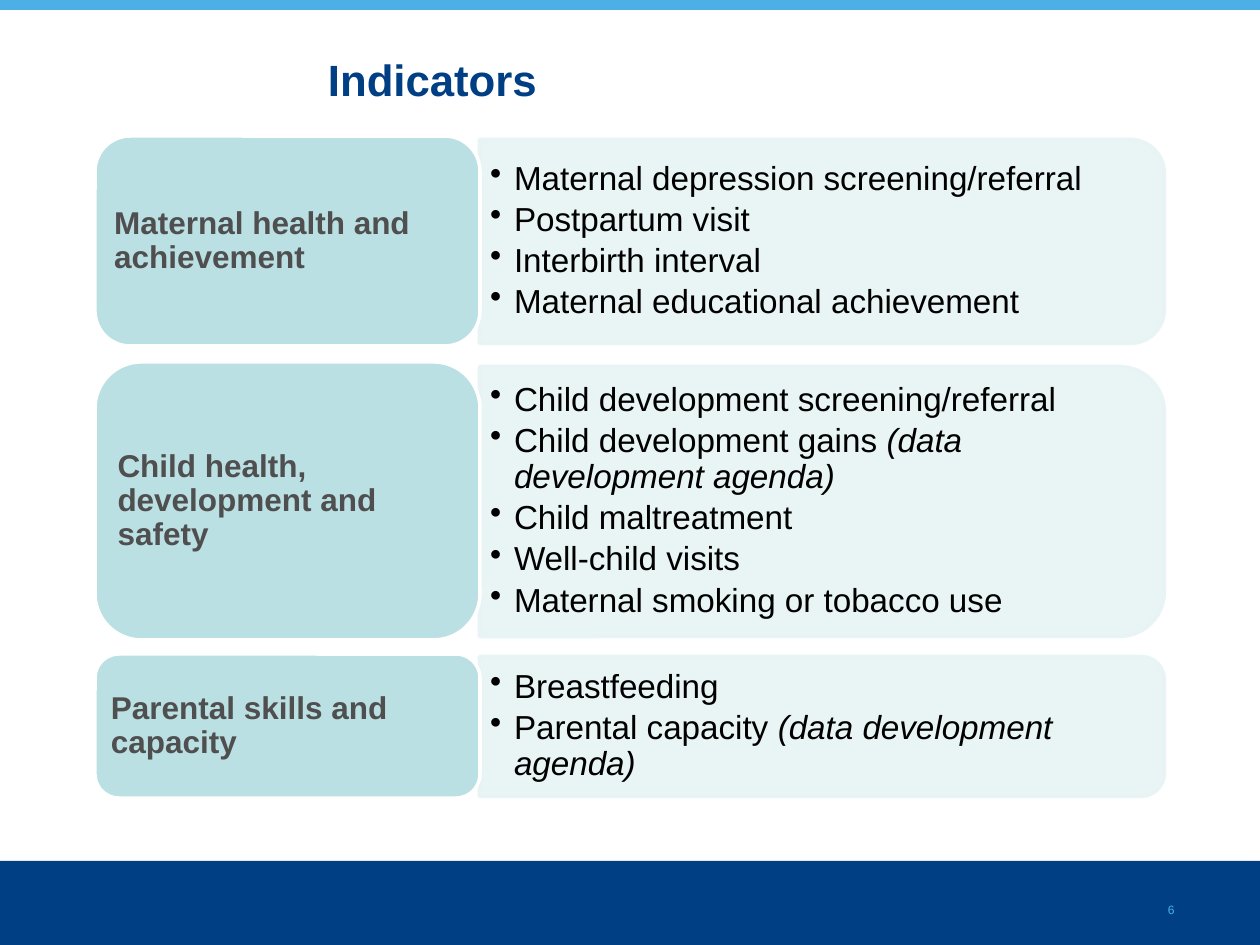
from lxml import etree
from pptx import Presentation
from pptx.dml.color import RGBColor
from pptx.enum.shapes import MSO_SHAPE
from pptx.enum.text import MSO_ANCHOR, MSO_AUTO_SIZE, PP_ALIGN
from pptx.oxml.ns import qn
from pptx.util import Pt

RECT = MSO_SHAPE.RECTANGLE
ROUNDED = MSO_SHAPE.ROUNDED_RECTANGLE
ROUND_TOP = MSO_SHAPE.ROUND_2_SAME_RECTANGLE
MIDDLE = MSO_ANCHOR.MIDDLE
TOP = MSO_ANCHOR.TOP
LEFT = PP_ALIGN.LEFT
NO_FIT = MSO_AUTO_SIZE.NONE
PX = 7257

NAVY = "003F83"
SKY = "4CAFE6"
TEAL = "BBE0E3"
PALE = "E7F3F4"


def paint(fill, color):
    fill.solid()
    fill.fore_color.rgb = RGBColor.from_string(color)


def write(frame, lines, size, color, bold=False, anchor=MIDDLE, inset=(13, 6),
          spacing=1.0, after=0, bullet_indent=0, wrap=True, baseline=0):
    frame.word_wrap = wrap
    frame.auto_size = NO_FIT
    frame.vertical_anchor = anchor
    frame.margin_left = frame.margin_right = inset[0] * PX
    frame.margin_top = frame.margin_bottom = inset[1] * PX
    for index, line in enumerate(lines):
        paragraph = frame.add_paragraph() if index else frame.paragraphs[0]
        paragraph.alignment = LEFT
        paragraph.line_spacing = spacing
        paragraph.space_after = Pt(after)
        if bullet_indent:
            props = paragraph._p.get_or_add_pPr()
            props.set("marL", str(bullet_indent * PX))
            props.set("indent", str(-bullet_indent * PX))
            etree.SubElement(props, qn("a:buChar")).set("char", "•")
        for part, text in enumerate(line):
            run = paragraph.add_run()
            run.text = text
            run.font.name = "Arial"
            run.font.size = Pt(size)
            run.font.bold = bold
            run.font.italic = part == 1
            paint(run.font.fill, color)
            if baseline:
                run._r.get_or_add_rPr().set("baseline", str(baseline))


prs = Presentation()
prs.slide_width = 1260 * PX
prs.slide_height = 945 * PX
slide = prs.slides.add_slide(prs.slide_layouts[5])
shapes = slide.shapes

for top, height, color in [(861, 84, NAVY), (0, 10, SKY)]:
    band = shapes.add_shape(RECT, 0, top * PX, 1260 * PX, height * PX)
    band.shadow.inherit = False
    paint(band.fill, color)
    band.line.fill.background()

page_number = shapes.add_textbox(1155 * PX, 882 * PX, 43 * PX, 29 * PX)
write(page_number.text_frame, [["6"]], 12, "46B0E7", anchor=TOP,
      wrap=False, baseline=-25000)

title = shapes.title
title.left, title.top = 315 * PX, 42 * PX
title.width, title.height = 851 * PX, 73 * PX
write(title.text_frame, [["Indicators"]], 25, NAVY, bold=True)

groups = [
    ("Maternal health and achievement", 136, 210, 204, [
        ["Maternal depression screening/referral"],
        ["Postpartum visit"],
        ["Interbirth interval"],
        ["Maternal educational achievement"],
    ]),
    ("Child health, development and safety", 362, 278, 270, [
        ["Child development screening/referral"],
        ["Child development gains ", "(data development agenda)"],
        ["Child maltreatment"],
        ["Well-child visits"],
        ["Maternal smoking or tobacco use"],
    ]),
    ("Parental skills and capacity", 654, 144, 140, [
        ["Breastfeeding"],
        ["Parental capacity ", "(data development agenda)"],
    ]),
]
label_left, label_width, panel_width = 95, 385, 685
panel_left = label_left + label_width

for name, top, height, panel_height, indicators in groups:
    middle = top + height // 2
    panel = shapes.add_shape(
        ROUND_TOP,
        (panel_left + (panel_width - panel_height) // 2) * PX,
        (middle - panel_width // 2) * PX,
        panel_height * PX, panel_width * PX)
    panel.rotation = 90
    panel.shadow.inherit = False
    paint(panel.fill, PALE)
    paint(panel.line.fill, PALE)
    panel.line.width = Pt(2)
    for tint in panel._element.spPr.iter(qn("a:srgbClr")):
        etree.SubElement(tint, qn("a:alpha")).set("val", "90000")

    listing = shapes.add_textbox(panel_left * PX, (top + 14) * PX,
                                 675 * PX, (height - 28) * PX)
    write(listing.text_frame, indicators, 19, "000000", inset=(10, 5),
          spacing=0.9, after=3, bullet_indent=24)

    label = shapes.add_shape(ROUNDED, label_left * PX, top * PX,
                             label_width * PX, height * PX)
    label.shadow.inherit = False
    paint(label.fill, TEAL)
    paint(label.line.fill, "FFFFFF")
    label.line.width = Pt(2)
    write(label.text_frame, [[name]], 18, "4F4F4F", bold=True,
          inset=(9, 5), spacing=0.9)

prs.save("out.pptx")
